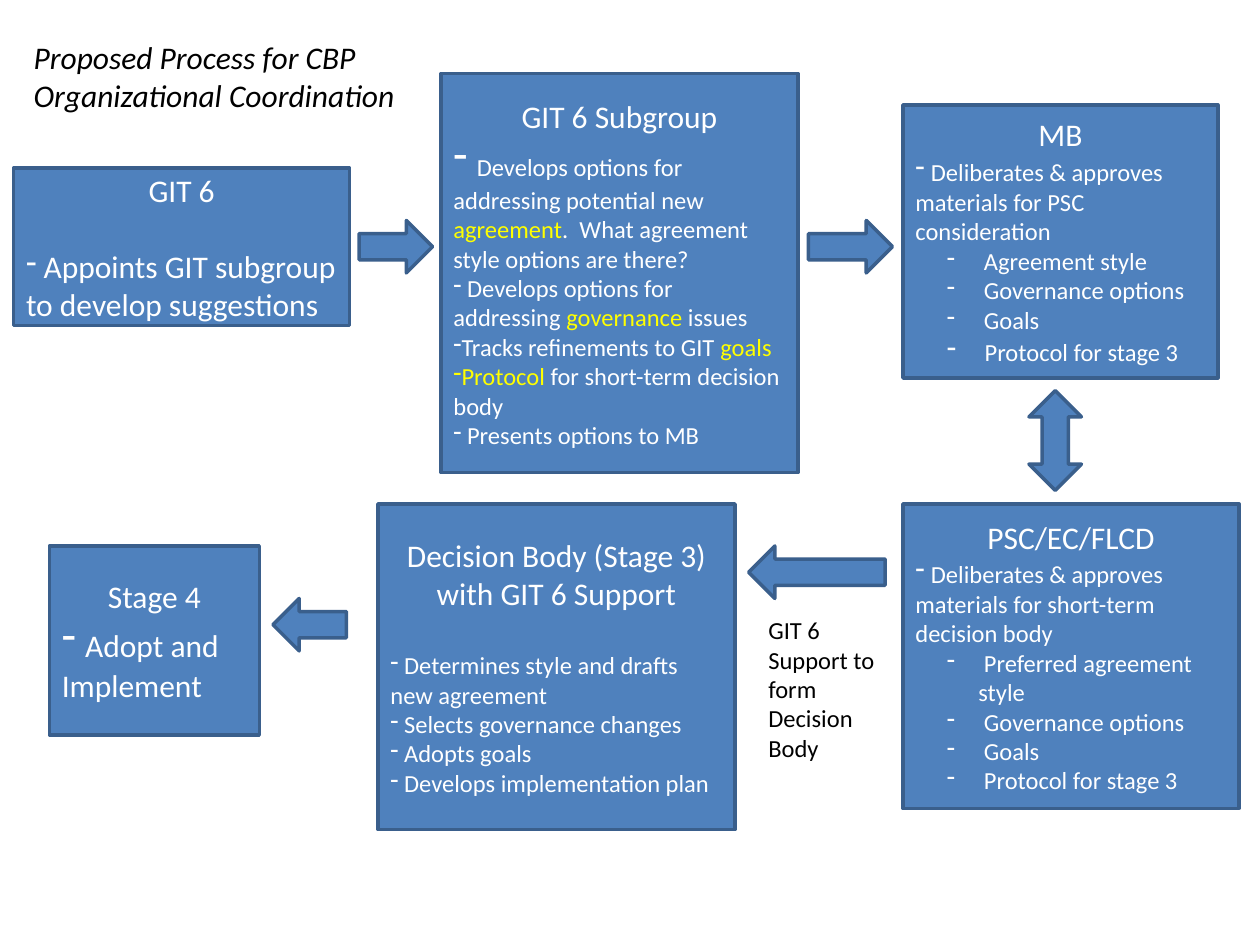
from dataclasses import dataclass

from lxml.etree import SubElement
from pptx import Presentation
from pptx.dml.color import RGBColor as RGB
from pptx.enum.shapes import MSO_SHAPE as Shape
from pptx.enum.text import MSO_ANCHOR as Anchor, PP_ALIGN as Align
from pptx.oxml.ns import qn
from pptx.util import Inches, Pt


@dataclass(frozen=True)
class Theme:
    """Colours, font and type sizes of the slide."""
    font: str = "Calibri"
    fill: RGB = RGB(0x4F, 0x81, 0xBD)
    line: RGB = RGB(0x3A, 0x5F, 0x8C)
    light: RGB = RGB(255, 255, 255)
    dark: RGB = RGB(0, 0, 0)
    accent: RGB = RGB(255, 255, 0)
    head: int = 18
    body: int = 14
    lead: int = 16
    big_lead: int = 24
    gap: int = 22


@dataclass(frozen=True)
class Item:
    """A bullet; words between asterisks take the accent colour."""
    text: str
    size: int = Theme.body
    lead: int = 0
    level: int = 0
    space: str = " "


T = Theme()
COLS, ROWS = 120, 90


def cells(prs, box):
    """Turn a box in grid columns and rows into slide lengths."""
    x, y, w, h = box
    col, row = prs.slide_width / COLS, prs.slide_height / ROWS
    return int(x * col), int(y * row), int(w * col), int(h * row)


def write(p, text, size=T.body, color=T.light, italic=False, align=Align.LEFT):
    """Add text to a paragraph as one formatted run."""
    p.alignment = align
    r = p.add_run()
    r.text = text
    r.font.name, r.font.size, r.font.italic = T.font, Pt(size), italic
    r.font.color.rgb = color


def write_item(p, item, before=0):
    """Fill a paragraph with a dashed list item."""
    p.level = item.level
    p.space_before = Pt(before)
    pPr = p._p.get_or_add_pPr()
    pPr.set("marL", str(Inches(0.5 * item.level)))
    pPr.set("indent", str(Inches(-0.25 * item.level)))
    SubElement(pPr, qn("a:buChar")).set("char", "-")
    text = item.text
    if item.lead:
        write(p, item.space, size=item.lead)
    else:
        text = item.space + text
    for i, part in enumerate(text.split("*")):
        if part:
            write(p, part, size=item.size, color=T.accent if i % 2 else T.light)


def add_block(prs, s, box, kind=Shape.RECTANGLE):
    """Place a filled, outlined preset shape."""
    sp = s.shapes.add_shape(kind, *cells(prs, box))
    sp.shadow.inherit = False
    sp.fill.solid()
    sp.fill.fore_color.rgb = T.fill
    sp.line.color.rgb = T.line
    sp.line.width = Pt(2)
    return sp


def add_stage(prs, s, box, heading, items, gap=0):
    """Place a process box with a centred heading above its list."""
    tf = add_block(prs, s, box).text_frame
    tf.word_wrap, tf.vertical_anchor = True, Anchor.MIDDLE
    write(tf.paragraphs[0], heading, size=T.head, align=Align.CENTER)
    for i, item in enumerate(items):
        write_item(tf.add_paragraph(), item, before=0 if i else gap)


def add_title(prs, s, box, text):
    """Move and fill the title placeholder."""
    sp = s.shapes.title
    sp.left, sp.top, sp.width, sp.height = cells(prs, box)
    tf = sp.text_frame
    tf.word_wrap, tf.vertical_anchor = True, Anchor.TOP
    write(tf.paragraphs[0], text, size=T.head, color=T.dark, italic=True)


def add_note(prs, s, box, text):
    """Place a plain dark caption."""
    tf = s.shapes.add_textbox(*cells(prs, box)).text_frame
    tf.word_wrap = True
    write(tf.paragraphs[0], text, color=T.dark)


def sub(text, lead=0):
    """Make a second-level item."""
    return Item(text, lead=lead, level=1)


STAGES = [
    ((1.3, 16, 32, 15), "GIT 6",
     [Item("Appoints GIT subgroup to develop suggestions", size=T.head)], T.gap),
    ((42, 7, 34, 38), "GIT 6 Subgroup", [
        Item("Develops options for addressing potential new *agreement*.  "
             "What agreement style options are there?", lead=T.big_lead),
        Item("Develops options for addressing *governance* issues"),
        Item("Tracks refinements to GIT *goals*", space=""),
        Item("*Protocol* for short-term decision body", space=""),
        Item("Presents options to MB")], 0),
    ((86, 10, 30, 26), "MB", [
        Item("Deliberates & approves materials for PSC consideration", lead=T.lead),
        sub("Agreement style"), sub("Governance options"), sub("Goals"),
        sub("Protocol for stage 3", lead=T.lead)], 0),
    ((86, 48, 32, 29), "PSC/EC/FLCD", [
        Item("Deliberates & approves materials for short-term decision body",
             lead=T.lead),
        sub("Preferred agreement style"), sub("Governance options"),
        sub("Goals"), sub("Protocol for stage 3")], 0),
    ((36, 48, 34, 31), "Decision Body (Stage 3) with GIT 6 Support", [
        Item("Determines style and drafts new agreement"),
        Item("Selects governance changes"),
        Item("Adopts goals"),
        Item("Develops implementation plan")], T.gap),
    ((4.7, 52, 20, 18), "Stage 4",
     [Item("Adopt and Implement", size=T.head, lead=T.big_lead)], 0),
]

ARROWS = [
    ((34.2, 21, 7, 5), Shape.RIGHT_ARROW),
    ((77, 21, 8, 5), Shape.RIGHT_ARROW),
    ((98, 37.2, 5, 9.5), Shape.UP_DOWN_ARROW),
    ((71.3, 52, 13, 5), Shape.LEFT_ARROW),
    ((26, 57, 7, 5), Shape.LEFT_ARROW),
]


def main():
    """Build and save the process slide."""
    prs = Presentation()
    prs.slide_width, prs.slide_height = Inches(10), Inches(7.5)
    s = prs.slides.add_slide(prs.slide_layouts[5])
    add_title(prs, s, (2, 3, 37, 8.5),
              "Proposed Process for CBP Organizational Coordination")
    for box, heading, items, gap in STAGES:
        add_stage(prs, s, box, heading, items, gap)
    for box, kind in ARROWS:
        add_block(prs, s, box, kind)
    add_note(prs, s, (72, 58, 13, 15.4), "GIT 6 Support to form Decision Body")
    prs.save("out.pptx")


if __name__ == "__main__":
    main()
